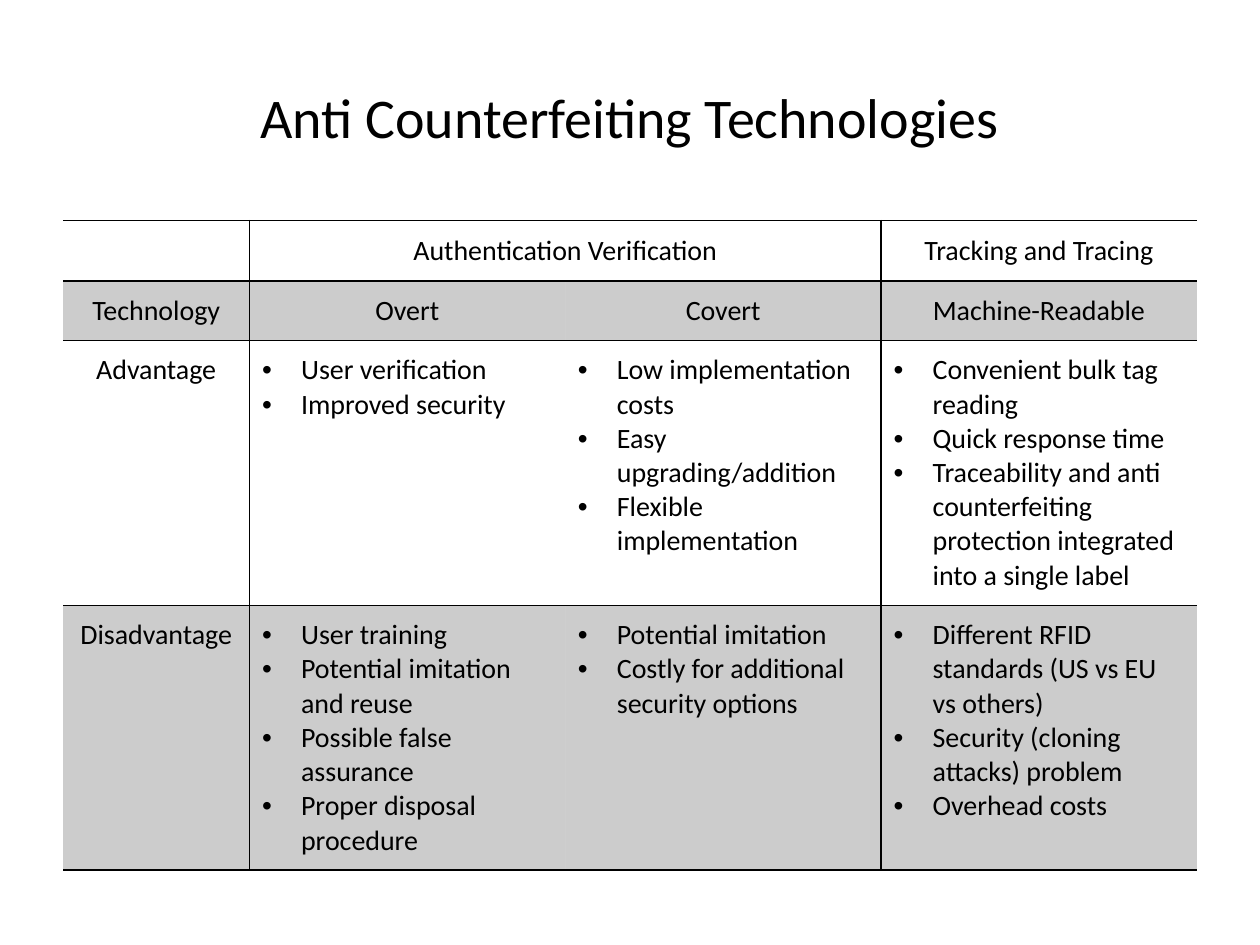
from dataclasses import dataclass

from lxml.etree import SubElement as Sub
from pptx import Presentation
from pptx.dml.color import RGBColor as Rgb
from pptx.enum.text import MSO_ANCHOR as Anchor, PP_ALIGN as Align
from pptx.oxml import parse_xml
from pptx.oxml.ns import nsdecls, qn
from pptx.util import Inches, Pt


@dataclass(frozen=True)
class Theme:
    font: str = "Calibri"
    ink: str = "000000"
    head: int = 32
    body: int = 16
    line: int = 1
    shade: int = 20
    pad: float = 0.1
    dent: float = 0.31


@dataclass(frozen=True)
class Row:
    tall: float
    cells: tuple
    shade: bool = False


LOOK = Theme()
WIDE, HIGH = Inches(10), Inches(7.5)
EDGE, TOP, SPAN = 0.05, 1.75 / 7.5, 0.9
FIRST = 0.148
COLS = (FIRST,) + ((SPAN - FIRST) / 3,) * 3
RULED = (1, 3)
ROWS = (
    Row(0.47, ("", "Authentication Verification", "", "Tracking and Tracing")),
    Row(0.47, ("Technology", "Overt", "Covert", "Machine-Readable"), True),
    Row(2.1, (
        "Advantage",
        ("User verification", "Improved security"),
        ("Low implementation costs", "Easy upgrading/addition",
         "Flexible implementation"),
        ("Convenient bulk tag reading", "Quick response time",
         "Traceability and anti counterfeiting protection integrated "
         "into a single label"),
    )),
    Row(2.1, (
        "Disadvantage",
        ("User training", "Potential imitation and reuse",
         "Possible false assurance", "Proper disposal procedure"),
        ("Potential imitation", "Costly for additional security options"),
        ("Different RFID standards (US vs EU vs others)",
         "Security (cloning attacks) problem", "Overhead costs"),
    ), True),
)


def add_run(para, text: str, size: int) -> None:
    run = para.add_run()
    run.text = text
    font = run.font
    font.name, font.size, font.bold = LOOK.font, Pt(size), False
    font.color.rgb = Rgb.from_string(LOOK.ink)


def add_dot(para) -> None:
    props = para._p.get_or_add_pPr()
    props.set("marL", str(Inches(LOOK.dent)))
    props.set("indent", str(-Inches(LOOK.dent)))
    Sub(props, qn("a:buFont"), typeface="Arial")
    Sub(props, qn("a:buChar"), char="•")


def write(cell, text: str | tuple) -> None:
    frame = cell.text_frame
    frame.word_wrap = True
    items = (text,) if isinstance(text, str) else text
    for i, item in enumerate(items):
        para = frame.add_paragraph() if i else frame.paragraphs[0]
        if isinstance(text, str):
            para.alignment = Align.CENTER
        else:
            para.alignment = Align.LEFT
            add_dot(para)
        add_run(para, item, LOOK.body)


def paint(cell, shade: bool) -> None:
    if not shade:
        cell.fill.background()
        return
    cell.fill.solid()
    cell.fill.fore_color.rgb = Rgb.from_string(LOOK.ink)
    tint = cell._tc.tcPr.find(f".//{qn('a:srgbClr')}")
    Sub(tint, qn("a:alpha"), val=str(LOOK.shade * 1000))


def rule(cell, col: int) -> None:
    sides = {"lnL": col in RULED, "lnR": col + 1 in RULED,
             "lnT": True, "lnB": True}
    for i, (side, shown) in enumerate(sides.items()):
        ink = (f'<a:solidFill><a:srgbClr val="{LOOK.ink}"/></a:solidFill>'
               if shown else "<a:noFill/>")
        line = parse_xml(f'<a:{side} {nsdecls("a")} w="{Pt(LOOK.line)}">'
                         f'{ink}</a:{side}>')
        cell._tc.tcPr.insert(i, line)


def add_title(slide, text: str) -> None:
    title = slide.shapes.title
    title.left, title.top = int(WIDE * EDGE), int(HIGH * 0.04)
    title.width, title.height = int(WIDE * SPAN), Inches(1.25)
    frame = title.text_frame
    frame.vertical_anchor = Anchor.MIDDLE
    para = frame.paragraphs[0]
    para.alignment = Align.CENTER
    add_run(para, text, LOOK.head)


def add_grid(slide, rows: tuple[Row, ...]) -> None:
    tall = Inches(sum(row.tall for row in rows))
    grid = slide.shapes.add_table(
        len(rows), len(COLS), int(WIDE * EDGE), int(HIGH * TOP),
        int(WIDE * SPAN), tall).table
    grid.first_row = grid.horz_banding = False
    for col, share in zip(grid.columns, COLS):
        col.width = int(WIDE * share)
    for r, row in enumerate(rows):
        grid.rows[r].height = Inches(row.tall)
        for c, text in enumerate(row.cells):
            cell = grid.cell(r, c)
            cell.margin_left = cell.margin_right = Inches(LOOK.pad)
            cell.margin_top = cell.margin_bottom = Inches(LOOK.pad)
            cell.vertical_anchor = Anchor.TOP if r else Anchor.MIDDLE
            write(cell, text)
            paint(cell, row.shade)
            rule(cell, c)
    grid.cell(0, 1).merge(grid.cell(0, 2))


def main() -> None:
    deck = Presentation()
    deck.slide_width, deck.slide_height = WIDE, HIGH
    slide = deck.slides.add_slide(deck.slide_layouts[5])
    add_title(slide, "Anti Counterfeiting Technologies")
    add_grid(slide, ROWS)
    deck.save("out.pptx")


if __name__ == "__main__":
    main()
